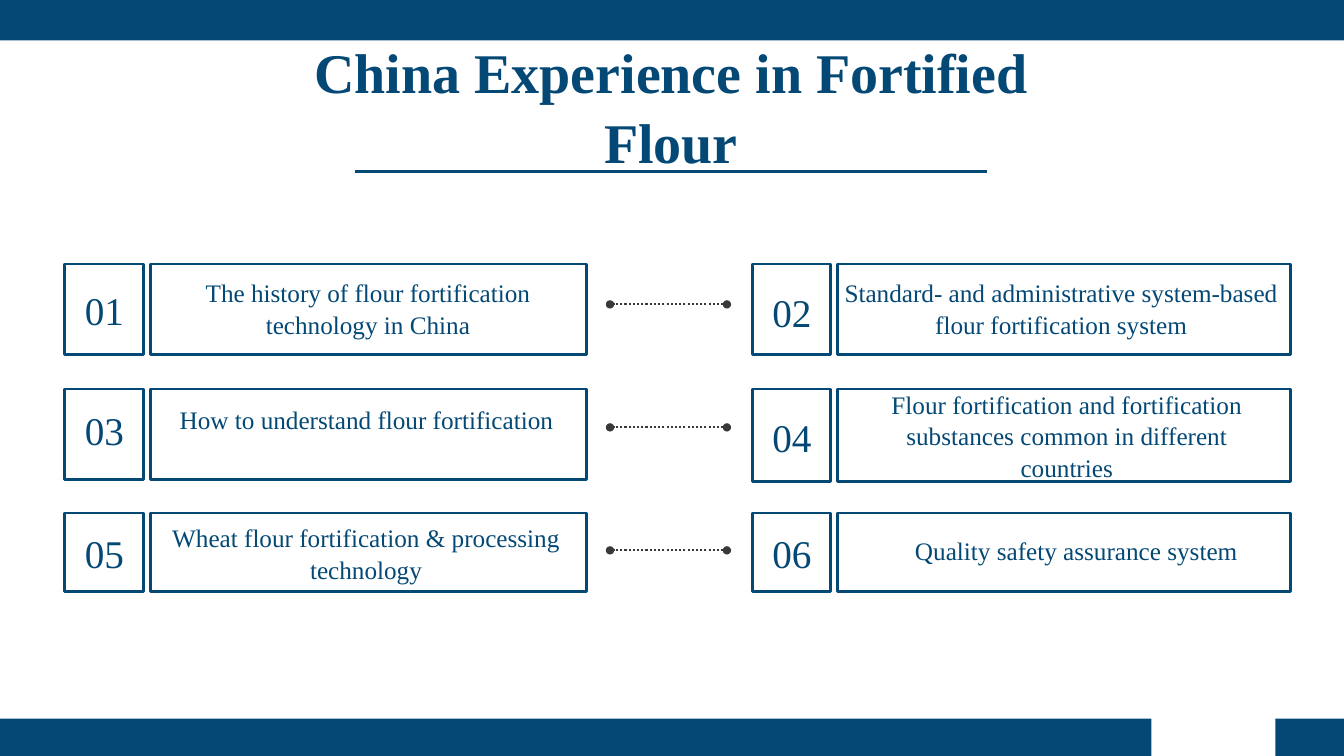
from dataclasses import dataclass
from lxml import etree
from pptx import Presentation
from pptx.dml.color import RGBColor
from pptx.enum.dml import MSO_LINE
from pptx.enum.shapes import MSO_CONNECTOR, MSO_SHAPE
from pptx.enum.text import MSO_ANCHOR, PP_ALIGN
from pptx.oxml.ns import qn
from pptx.util import Inches, Pt

RECT = MSO_SHAPE.RECTANGLE
STRAIGHT = MSO_CONNECTOR.STRAIGHT
DOTS = MSO_LINE.ROUND_DOT
CENTER = PP_ALIGN.CENTER
MIDDLE = MSO_ANCHOR.MIDDLE


@dataclass
class Theme:
    blue: RGBColor = RGBColor(0x04, 0x48, 0x75)
    gray: RGBColor = RGBColor(0x3B, 0x38, 0x38)
    font: str = "Times New Roman"
    title: int = 40
    number: int = 28
    body: int = 18


theme = Theme()
deck = Presentation()
deck.slide_width = Inches(13.33)
deck.slide_height = Inches(7.5)
slide = deck.slides.add_slide(deck.slide_layouts[6])
shapes = slide.shapes


def add_text(text, spot, size, bold=False):
    box = shapes.add_textbox(*map(Inches, spot))
    frame = box.text_frame
    frame.word_wrap = True
    frame.vertical_anchor = MIDDLE
    para = frame.paragraphs[0]
    para.alignment = CENTER
    para.line_spacing = 1.05
    run = para.add_run()
    run.text = text
    run.font.name = theme.font
    run.font.size = Pt(size)
    run.font.bold = bold
    run.font.color.rgb = theme.blue


def add_rule(left, right, top, color, width):
    rule = shapes.add_connector(
        STRAIGHT, Inches(left), Inches(top), Inches(right), Inches(top))
    rule.line.color.rgb = color
    rule.line.width = Pt(width)
    props = rule._element.spPr
    etree.SubElement(props, qn("a:effectLst"))
    return rule


# Bands at the top and bottom edges
for spot in [(0, -0.01, 13.33, 0.41), (12.65, 7.13, 0.68, 0.37),
             (0, 7.13, 11.42, 0.37)]:
    band = shapes.add_shape(RECT, *map(Inches, spot))
    band.shadow.inherit = False
    band.fill.solid()
    band.fill.fore_color.rgb = theme.blue
    band.line.fill.background()

# Topics: text, text box place, top of the number, height of the frames
topics = [
    ("The history of flour fortification technology in China",
     (1.39, 2.7, 4.52, 0.71), 2.78, 0.9),
    ("Standard- and administrative system-based flour fortification system",
     (8.24, 2.7, 4.57, 0.71), 2.8, 0.9),
    ("How to understand flour fortification",
     (1.64, 3.95, 3.99, 0.4), 3.97, 0.9),
    ("Flour fortification and fortification substances common in different "
     "countries", (8.57, 3.81, 4.02, 1.01), 4.04, 0.92),
    ("Wheat flour fortification & processing technology",
     (1.54, 5.13, 4.18, 0.71), 5.19, 0.78),
    ("Quality safety assurance system",
     (8.85, 5.25, 3.65, 0.4), 5.19, 0.78),
]
columns = [(0.64, 1.49, 4.33), (7.46, 8.31, 4.49)]
rows = [2.62, 3.86, 5.09]

for i, (text, spot, num_top, height) in enumerate(topics):
    row, col = divmod(i, 2)
    num_left, left, width = columns[col]
    for x, wide in [(left, width), (num_left, 0.78)]:
        frame = shapes.add_shape(
            RECT, Inches(x), Inches(rows[row]), Inches(wide), Inches(height))
        frame.shadow.inherit = False
        frame.fill.background()
        frame.line.color.rgb = theme.blue
        frame.line.width = Pt(2)
    add_text(text, spot, theme.body)
    add_text(f"{i + 1:02}", (num_left - 0.11, num_top, 1.01, 0.57),
             theme.number)

# Dotted links between the columns
for row in range(3):
    link = add_rule(7.21, 6.05, 3.02 + 1.22 * row, theme.gray, 1.5)
    link.line.dash_style = DOTS
    for end in ("a:headEnd", "a:tailEnd"):
        etree.SubElement(link.line._ln, qn(end), type="oval")

add_text("China Experience in Fortified Flour", (3, 0.31, 7.31, 1.45),
         theme.title, bold=True)
add_rule(3.52, 9.79, 1.7, theme.blue, 2)

deck.save("out.pptx")
